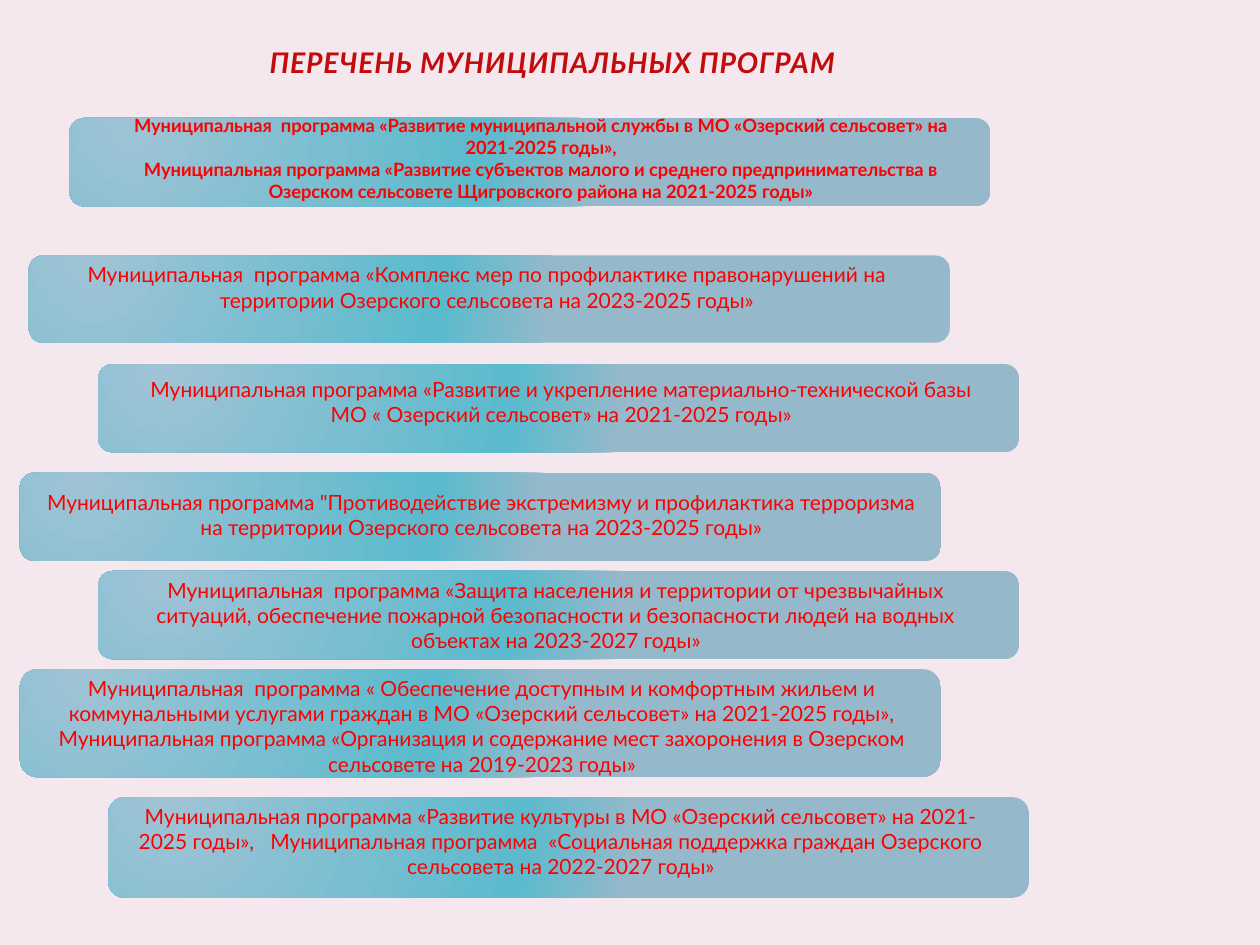
"""Builds the slide listing the municipal programmes of the Ozersky village council."""
from lxml import etree
from pptx import Presentation
from pptx.dml.color import RGBColor
from pptx.enum.shapes import MSO_SHAPE
from pptx.enum.text import MSO_ANCHOR, PP_ALIGN
from pptx.oxml import parse_xml
from pptx.oxml.ns import nsdecls, qn
from pptx.util import Cm, Pt

BAR_SHAPE = MSO_SHAPE.FLOWCHART_ALTERNATE_PROCESS
CENTER = PP_ALIGN.CENTER
TOP, BOTTOM = MSO_ANCHOR.TOP, MSO_ANCHOR.BOTTOM

BACKGROUND = RGBColor(0xF4, 0xE7, 0xED)
TITLE_RED = RGBColor(0xC0, 0x00, 0x00)
TEXT_RED = RGBColor(0xFF, 0x00, 0x00)
BAR_STOPS = (
    (0, RGBColor(0x9F, 0xC3, 0xD5)),
    (76, RGBColor(0x5B, 0xBA, 0xCD)),
    (100, RGBColor(0x95, 0xB9, 0xCB)),
)

BAR_WIDTH = 18.57
PROGRAMMES = (
    ((1.4, 2.38, 1.78), (1.98, 2.18, 17.86, 1.9), 10.5, True,
     "Муниципальная  программа «Развитие муниципальной службы в МО «Озерский сельсовет» "
     "на 2021-2025 годы»,\n"
     "Муниципальная программа «Развитие субъектов малого и среднего предпринимательства "
     "в Озерском сельсовете Щигровского района на 2021-2025 годы»"),
    ((0.58, 5.15, 1.76), (0.79, 5.15, 18.06, 1.27), 12, False,
     "Муниципальная  программа «Комплекс мер по профилактике правонарушений "
     "на территории Озерского сельсовета на 2023-2025 годы»"),
    ((1.98, 7.34, 1.78), (2.39, 7.46, 17.86, 1.27), 12, False,
     "Муниципальная программа «Развитие и укрепление материально-технической базы "
     "МО « Озерский сельсовет» на 2021-2025 годы»"),
    ((0.4, 9.53, 1.78), (0.58, 9.73, 18.26, 1.27), 12, False,
     "Муниципальная программа \"Противодействие экстремизму и профилактика терроризма "
     "на территории Озерского сельсовета на 2023-2025 годы»"),
    ((1.98, 11.51, 1.78), (2.18, 11.51, 18.06, 1.8), 12, False,
     "Муниципальная  программа «Защита населения и территории от чрезвычайных ситуаций, "
     "обеспечение пожарной безопасности и безопасности людей на водных объектах "
     "на 2023-2027 годы»"),
    ((0.4, 13.49, 2.18), (0.79, 13.49, 17.86, 2.31), 12, False,
     "Муниципальная  программа « Обеспечение доступным и комфортным жильем и коммунальными "
     "услугами граждан в МО «Озерский сельсовет» на 2021-2025 годы»,\n"
     "Муниципальная программа «Организация и содержание мест захоронения "
     "в Озерском сельсовете на 2019-2023 годы»"),
    ((2.18, 16.07, 2.03), (2.18, 16.07, 18.26, 1.8), 12, False,
     "Муниципальная программа «Развитие культуры в МО «Озерский сельсовет» "
     "на 2021-2025 годы»,   Муниципальная программа  «Социальная поддержка граждан "
     "Озерского сельсовета на 2022-2027 годы»"),
)


class ProgrammeSlide:
    """Holds the style and the current slide."""

    font_name = "Lato"

    def __init__(self, slide):
        self.slide = slide
        backdrop = slide.background.fill
        backdrop.solid()
        backdrop.fore_color.rgb = BACKGROUND

    def bar(self, left, top, height):
        """Add a rounded bar with a radial gradient."""
        bar = self.slide.shapes.add_shape(
            BAR_SHAPE, Cm(left), Cm(top), Cm(BAR_WIDTH), Cm(height))
        bar.shadow.inherit = False
        bar.line.fill.background()
        bar.fill.solid()
        stops = "".join(
            f'<a:gs pos="{percent * 1000}"><a:srgbClr val="{color}"/></a:gs>'
            for percent, color in BAR_STOPS)
        gradient = parse_xml(
            f'<a:gradFill {nsdecls("a")} rotWithShape="1"><a:gsLst>{stops}</a:gsLst>'
            '<a:path path="circle">'
            '<a:fillToRect l="15000" t="15000" r="100000" b="100000"/>'
            '</a:path></a:gradFill>')
        properties = bar._element.spPr
        properties.replace(properties.find(qn("a:solidFill")), gradient)

    def text(self, box, wording, size, color, bold=False, anchor=TOP, inset=0.13):
        """Add centred text and return its runs."""
        frame = self.slide.shapes.add_textbox(*map(Cm, box)).text_frame
        frame.word_wrap = True
        frame.vertical_anchor = anchor
        frame.margin_top = frame.margin_bottom = Cm(inset)
        paragraph = frame.paragraphs[0]
        paragraph.alignment = CENTER
        for index, line in enumerate(wording.split("\n")):
            if index:
                paragraph.add_line_break()
            run = paragraph.add_run()
            run.text = line
            run.font.name = self.font_name
            run.font.size = Pt(size)
            run.font.bold = bold
            run.font.color.rgb = color
        return paragraph.runs

    def title(self, box, wording):
        """Add the italic, slightly spaced heading."""
        for run in self.text(box, wording, 16.2, TITLE_RED, True, BOTTOM, 0):
            run.font.italic = True
            properties = run.font._element
            properties.set("spc", "50")
            color = properties.find(qn("a:solidFill"))[0]
            etree.SubElement(color, qn("a:alpha"), val="95000")


def main():
    """Build and save the presentation."""
    presentation = Presentation()
    presentation.slide_width, presentation.slide_height = Cm(25.4), Cm(19.05)
    page = ProgrammeSlide(presentation.slides.add_slide(presentation.slide_layouts[6]))
    page.title((1.4, 0.4, 19.99, 1.2), "ПЕРЕЧЕНЬ МУНИЦИПАЛЬНЫХ ПРОГРАММ")
    for bar, box, size, bold, wording in PROGRAMMES:
        page.bar(*bar)
        page.text(box, wording, size, TEXT_RED, bold)
    presentation.save("out.pptx")


if __name__ == "__main__":
    main()
